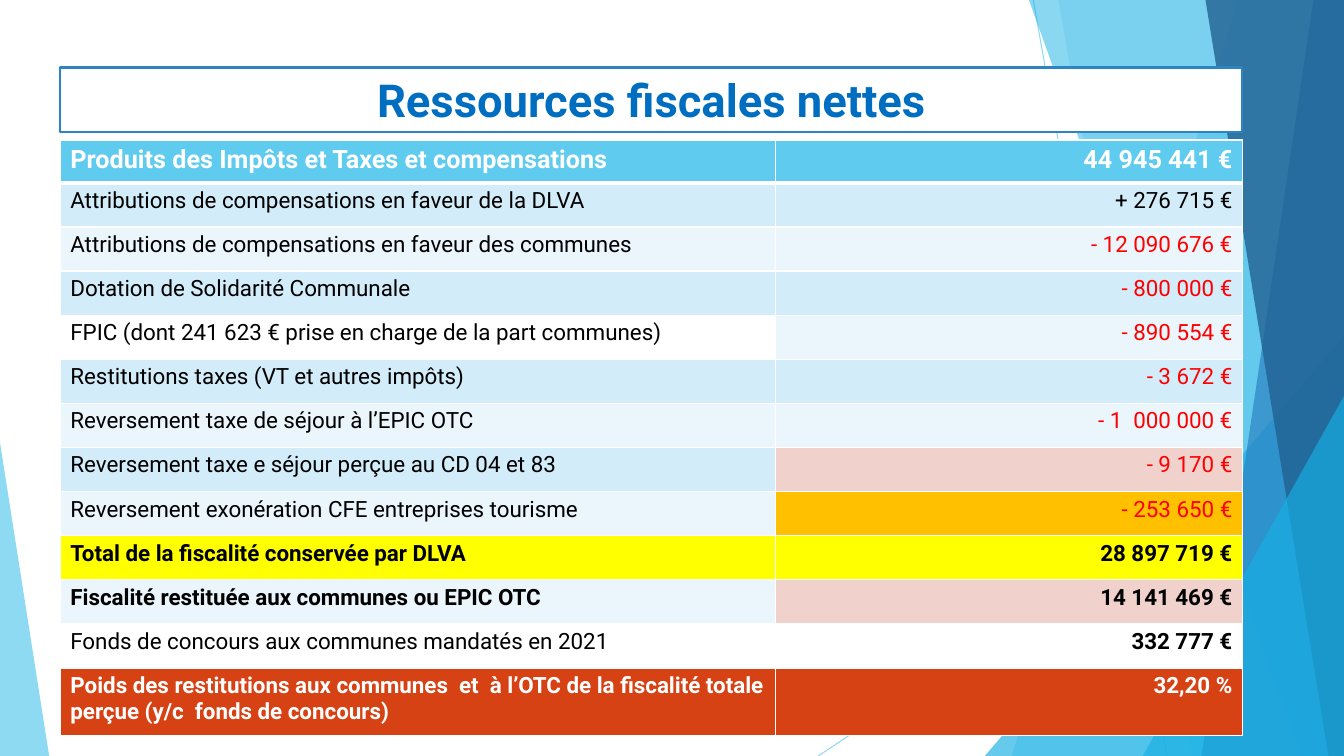
from dataclasses import dataclass
from typing import Any

import pptx
import pptx.dml.color
import pptx.enum.shapes
import pptx.enum.text
import pptx.oxml
import pptx.oxml.ns
import pptx.util

Cm = pptx.util.Cm
Pt = pptx.util.Pt
PP_ALIGN = pptx.enum.text.PP_ALIGN

SLIDE_WIDTH, SLIDE_HEIGHT = 33.87, 19.05
LEFT, WIDTH = 1.52, 29.79
FONT = "Roboto"
WHITE, BLACK, RED = "FFFFFF", "000000", "FF0000"
SKY, AZURE, BLUE, NAVY = "5FCBEF", "17B0E4", "2E83C3", "226292"
BAND, PALE, PINK = "D2ECF9", "EAF6FC", "F0D1CC"
AMBER, YELLOW, BRICK = "FFC000", "FFFF00", "D64214"


@dataclass
class Ray:
    start: tuple[float, float]
    end: tuple[float, float]


@dataclass
class Shard:
    top_x: float
    bottom_x: float
    colour: str
    opacity: int


@dataclass
class Corner:
    left: float
    top: float
    width: float
    apex: float
    colour: str
    opacity: int


@dataclass
class Entry:
    label: str
    amount: str
    label_fill: str
    amount_fill: str
    amount_colour: str = RED
    label_colour: str = BLACK
    label_bold: bool = False
    amount_bold: bool = False
    size: int = 16
    height: float = 1.11


RAYS = [Ray((26.04, 0), (29.41, SLIDE_HEIGHT)), Ray((SLIDE_WIDTH, 10.24), (20.62, SLIDE_HEIGHT))]

FACETS = [
    Shard(31.19, 25.5, SKY, 36),
    Shard(26.67, 30.05, SKY, 20),
    Corner(24.82, 8.46, 9.05, 1, AZURE, 66),
    Shard(25.93, 32.79, AZURE, 50),
    Shard(33.1, 30.28, BLUE, 70),
    Shard(30.38, 33.48, NAVY, 80),
    Corner(28.8, 9.98, 5.07, 1, AZURE, 66),
    Corner(0, 11.15, 1.24, 0, SKY, 70),
]

ENTRIES = [
    Entry("Produits des Impôts et Taxes et compensations", "44 945 441 €", SKY, SKY,
          WHITE, WHITE, True, True, 18, 1.08),
    Entry("Attributions de compensations en faveur de la DLVA", "+ 276 715 €", BAND, BAND, BLACK),
    Entry("Attributions de compensations en faveur des communes", "- 12 090 676 €", PALE, PALE),
    Entry("Dotation de Solidarité Communale", "- 800 000 €", BAND, BAND),
    Entry("FPIC (dont 241 623 € prise en charge de la part communes)", "- 890 554 €", WHITE, PALE),
    Entry("Restitutions taxes (VT et autres impôts)", "- 3 672 €", BAND, BAND),
    Entry("Reversement taxe de séjour à l’EPIC OTC", "- 1  000 000 €", PALE, PALE),
    Entry("Reversement taxe e séjour perçue au CD 04 et 83", "- 9 170 €", BAND, PINK),
    Entry("Reversement exonération CFE entreprises tourisme", "- 253 650 €", PALE, AMBER),
    Entry("Total de la fiscalité conservée par DLVA", "28 897 719 €", YELLOW, YELLOW,
          BLACK, BLACK, True, True),
    Entry("Fiscalité restituée aux communes ou EPIC OTC", "14 141 469 €", PALE, PINK,
          BLACK, BLACK, True, True),
    Entry("Fonds de concours aux communes mandatés en 2021", "332 777 €", WHITE, WHITE,
          BLACK, BLACK, False, True),
    Entry("Poids des restitutions aux communes  et  à l’OTC de la fiscalité totale perçue "
          "(y/c  fonds de concours)", "32,20 %", BRICK, BRICK,
          WHITE, WHITE, True, True, height=1.72),
]


def paint(fill: Any, colour: str, opacity: int = 100) -> None:
    fill.solid()
    fill.fore_color.rgb = pptx.dml.color.RGBColor.from_string(colour)
    if opacity < 100:
        tint = fill._xPr.find(".//" + pptx.oxml.ns.qn("a:srgbClr"))
        alpha = pptx.oxml.parse_xml(f'<a:alpha {pptx.oxml.ns.nsdecls("a")} val="{opacity * 1000}"/>')
        tint.append(alpha)


def apply(target: Any, values: dict[str, Any]) -> None:
    for attribute, value in values.items():
        setattr(target, attribute, value)


def write(frame: Any, text: str, align: Any, size: float, colour: str, bold: bool) -> None:
    paragraph = frame.paragraphs[0]
    paragraph.alignment = align
    run = paragraph.add_run()
    run.text = text
    apply(run.font, {"name": FONT, "size": Pt(size), "bold": bold})
    paint(run.font.fill, colour)


def draw_ray(slide: Any, ray: Ray) -> None:
    line = slide.shapes.add_connector(pptx.enum.shapes.MSO_CONNECTOR.STRAIGHT,
                                      *map(Cm, ray.start + ray.end))
    line.line.width = Pt(0.75)
    paint(line.line.fill, SKY, 70)
    line.element.spPr.append(pptx.oxml.parse_xml(f'<a:effectLst {pptx.oxml.ns.nsdecls("a")}/>'))


def draw_facet(slide: Any, facet: Shard | Corner) -> None:
    if isinstance(facet, Shard):
        outline = slide.shapes.build_freeform(Cm(facet.top_x), Cm(0))
        outline.add_line_segments([(Cm(x), Cm(y)) for x, y in (
            (SLIDE_WIDTH, 0), (SLIDE_WIDTH, SLIDE_HEIGHT), (facet.bottom_x, SLIDE_HEIGHT))])
        shape = outline.convert_to_shape()
    else:
        shape = slide.shapes.add_shape(
            pptx.enum.shapes.MSO_SHAPE.ISOSCELES_TRIANGLE, Cm(facet.left), Cm(facet.top),
            Cm(facet.width), Cm(SLIDE_HEIGHT - facet.top))
        shape.adjustments[0] = facet.apex
    shape.shadow.inherit = False
    shape.line.fill.background()
    paint(shape.fill, facet.colour, facet.opacity)


def draw_title(slide: Any, text: str) -> None:
    title = slide.shapes.title
    slide.shapes.element.append(title.element)
    apply(title, {"left": Cm(LEFT), "top": Cm(1.7), "width": Cm(WIDTH), "height": Cm(1.63)})
    paint(title.fill, WHITE)
    paint(title.line.fill, BLUE)
    title.line.width = Pt(1.5)
    apply(title.text_frame, {"word_wrap": True,
                             "auto_size": pptx.enum.text.MSO_AUTO_SIZE.NONE,
                             "vertical_anchor": pptx.enum.text.MSO_ANCHOR.MIDDLE})
    write(title.text_frame, text, PP_ALIGN.CENTER, 32.4, "006EC0", True)


def rule_cell(cell: Any, top: float, bottom: float) -> None:
    properties = cell._tc.get_or_add_tcPr()
    for side, width in {"L": 1, "R": 1, "T": top, "B": bottom}.items():
        properties.append(pptx.oxml.parse_xml(
            f'<a:ln{side} {pptx.oxml.ns.nsdecls("a")} w="{Pt(width)}"><a:solidFill>'
            f'<a:srgbClr val="{WHITE}"/></a:solidFill></a:ln{side}>'))


def draw_table(slide: Any, entries: list[Entry]) -> None:
    height = sum(entry.height for entry in entries)
    table = slide.shapes.add_table(len(entries), 2, Cm(LEFT), Cm(3.53), Cm(WIDTH), Cm(height)).table
    apply(table, {"first_row": False, "horz_banding": False})
    for column, width in zip(table.columns, (18.03, 11.76)):
        column.width = Cm(width)
    heavy_rules = (1, len(entries) - 1)
    for index, entry in enumerate(entries):
        table.rows[index].height = Cm(entry.height)
        top, bottom = (3 if rule in heavy_rules else 1 for rule in (index, index + 1))
        sides = (
            (entry.label, PP_ALIGN.LEFT, entry.label_colour, entry.label_bold, entry.label_fill),
            (entry.amount, PP_ALIGN.RIGHT, entry.amount_colour, entry.amount_bold, entry.amount_fill),
        )
        for column, (text, align, colour, bold, fill) in enumerate(sides):
            cell = table.cell(index, column)
            rule_cell(cell, top, bottom)
            paint(cell.fill, fill)
            write(cell.text_frame, text, align, entry.size, colour, bold)


def main() -> None:
    deck = pptx.Presentation()
    apply(deck, {"slide_width": Cm(SLIDE_WIDTH), "slide_height": Cm(SLIDE_HEIGHT)})
    slide = deck.slides.add_slide(deck.slide_layouts.get_by_name("Title Only"))
    for ray in RAYS:
        draw_ray(slide, ray)
    for facet in FACETS:
        draw_facet(slide, facet)
    draw_title(slide, "Ressources fiscales nettes")
    draw_table(slide, ENTRIES)
    deck.save("out.pptx")


if __name__ == "__main__":
    main()
